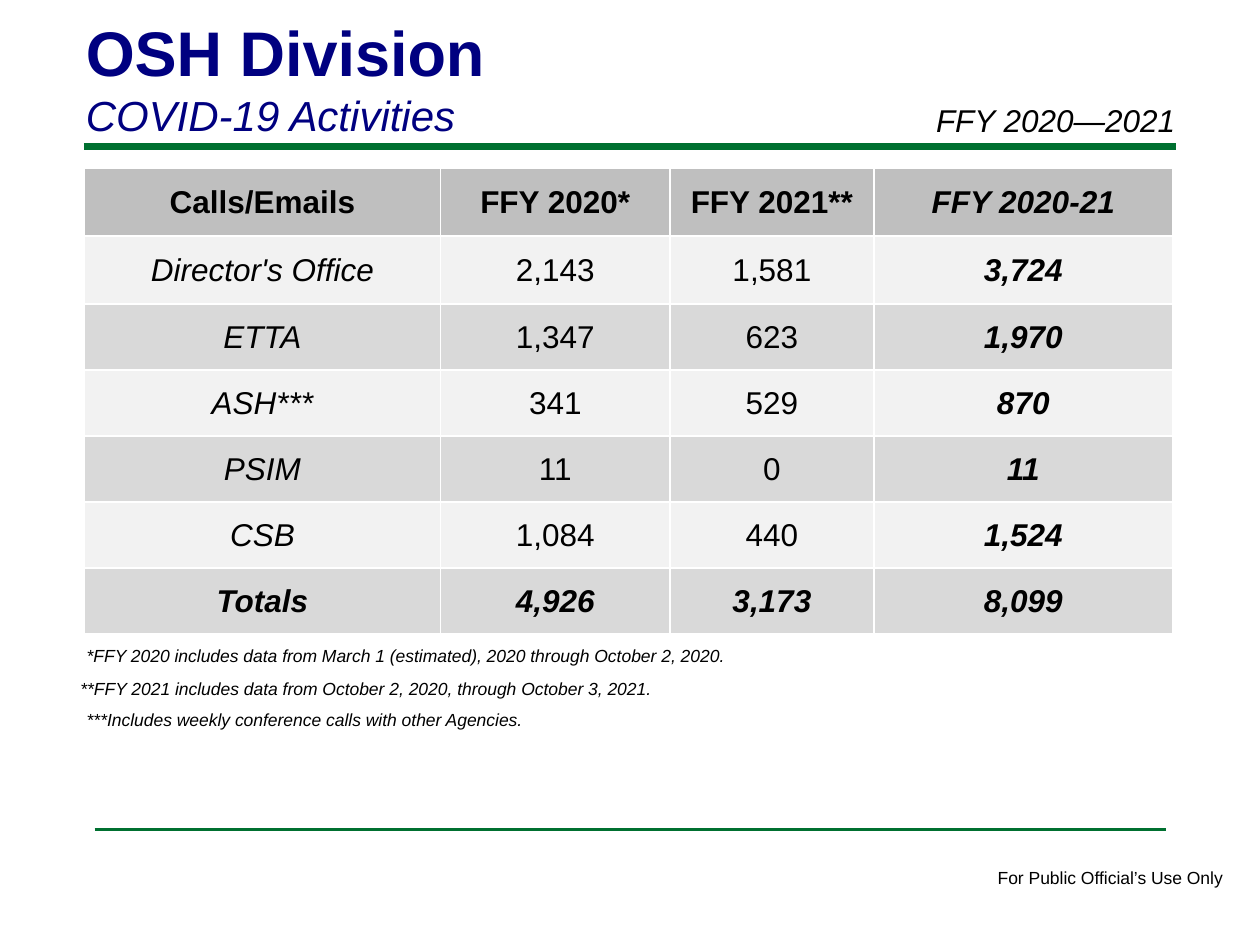
from lxml.etree import SubElement
from pptx import Presentation
from pptx.dml.color import RGBColor
from pptx.enum.shapes import MSO_CONNECTOR
from pptx.enum.text import MSO_ANCHOR, PP_ALIGN
from pptx.oxml.ns import qn
from pptx.util import Pt

NAVY = RGBColor(0x00, 0x00, 0x80)
GREEN = RGBColor(0x00, 0x70, 0x30)
BLACK = RGBColor(0x00, 0x00, 0x00)
WHITE = RGBColor(0xFF, 0xFF, 0xFF)
HEADER_GRAY = RGBColor(0xBF, 0xBF, 0xBF)
BAND_GRAYS = (RGBColor(0xD9, 0xD9, 0xD9), RGBColor(0xF2, 0xF2, 0xF2))

HEADING = "OSH Division"
SUBHEADING = "COVID-19 Activities"
ACTIVITY = [
    ("Calls/Emails", "FFY 2020*", "FFY 2021**", "FFY 2020-21"),
    ("Director's Office", "2,143", "1,581", "3,724"),
    ("ETTA", "1,347", "623", "1,970"),
    ("ASH***", "341", "529", "870"),
    ("PSIM", "11", "0", "11"),
    ("CSB", "1,084", "440", "1,524"),
    ("Totals", "4,926", "3,173", "8,099"),
]
COLUMN_WIDTHS = (203.6, 131.1, 116.5, 170.8)
ROW_HEIGHTS = (38.9,) * 2 + (37.7,) * 5
LABELS = [
    ("FFY 2020—2021", (527.8, 54, 180, 28.8), 18, True),
    ("*FFY 2020 includes data from March 1 (estimated), 2020 through October 2, 2020.",
     (42.5, 365, 628.6, 19.4), 10, True),
    ("**FFY 2021 includes data from October 2, 2020, through October 3, 2021.",
     (38.9, 383.8, 628.6, 19.4), 10, True),
    ("***Includes weekly conference calls with other Agencies.",
     (42.5, 401.8, 271.4, 19.4), 10, True),
    ("For Public Official’s Use Only", (563, 491.8, 144.7, 19.4), 10, False),
]
RULES = [(48, 672, 84, 4), (54, 666, 474, 2)]


def write(paragraph, text, size=18, color=BLACK, bold=False, italic=False,
          align=PP_ALIGN.LEFT):
    paragraph.alignment = align
    run = paragraph.add_run()
    run.text = text
    font = run.font
    font.name, font.size = "Arial", Pt(size)
    font.bold, font.italic = bold, italic
    font.color.rgb = color


def add_borders(cell):
    properties = cell._tc.get_or_add_tcPr()
    for side in ("lnL", "lnR", "lnT", "lnB"):
        border = SubElement(properties, qn(f"a:{side}"), w=str(Pt(1)))
        fill = SubElement(border, qn("a:solidFill"))
        SubElement(fill, qn("a:srgbClr"), val=str(WHITE))


def place(shape, box):
    shape.left, shape.top, shape.width, shape.height = map(Pt, box)


def add_rule(slide, start, end, y, weight):
    rule = slide.shapes.add_connector(
        MSO_CONNECTOR.STRAIGHT, Pt(start), Pt(y), Pt(end), Pt(y))
    rule.line.color.rgb = GREEN
    rule.line.width = Pt(weight)
    SubElement(rule._element.spPr, qn("a:effectLst"))


def add_activity(slide):
    table = slide.shapes.add_table(
        len(ACTIVITY), len(COLUMN_WIDTHS), Pt(48.2), Pt(96),
        Pt(sum(COLUMN_WIDTHS)), Pt(sum(ROW_HEIGHTS))).table
    for column, width in zip(table.columns, COLUMN_WIDTHS):
        column.width = Pt(width)
    for row, height in zip(table.rows, ROW_HEIGHTS):
        row.height = Pt(height)
    last_row, last_column = len(ACTIVITY) - 1, len(COLUMN_WIDTHS) - 1
    for r, values in enumerate(ACTIVITY):
        for c, value in enumerate(values):
            cell = table.cell(r, c)
            add_borders(cell)
            cell.fill.solid()
            cell.fill.fore_color.rgb = BAND_GRAYS[r % 2] if r else HEADER_GRAY
            cell.vertical_anchor = MSO_ANCHOR.MIDDLE
            cell.margin_left = cell.margin_right = cell.margin_top = Pt(0.7)
            cell.margin_bottom = Pt(0)
            total = r == last_row or c == last_column
            write(cell.text_frame.paragraphs[0], value, bold=total or r == 0,
                  italic=total or (c == 0 and r > 0), align=PP_ALIGN.CENTER)


def main():
    deck = Presentation()
    deck.slide_width, deck.slide_height = Pt(720), Pt(540)
    slide = deck.slides.add_slide(deck.slide_layouts[5])

    for rule in RULES:
        add_rule(slide, *rule)

    title = slide.shapes.title
    place(title, (41.8, 4.3, 594, 79.9))
    title.text_frame.vertical_anchor = MSO_ANCHOR.TOP
    write(title.text_frame.paragraphs[0], HEADING, size=36, color=NAVY, bold=True)
    write(title.text_frame.add_paragraph(), SUBHEADING, size=24, color=NAVY, italic=True)

    add_activity(slide)

    for text, box, size, italic in LABELS:
        frame = slide.shapes.add_textbox(*map(Pt, box)).text_frame
        frame.word_wrap = True
        write(frame.paragraphs[0], text, size=size, italic=italic)

    deck.save("out.pptx")


if __name__ == "__main__":
    main()
